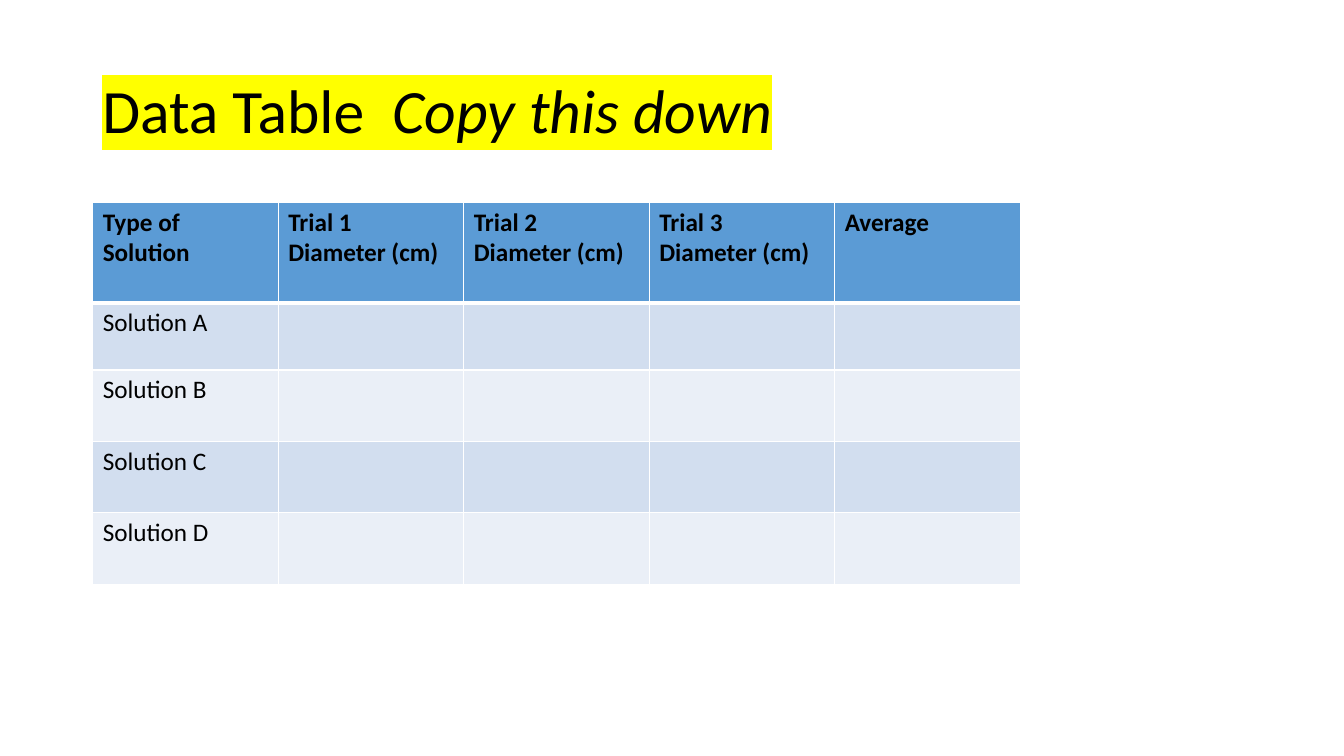
from lxml.etree import SubElement
from pptx import Presentation
from pptx.dml.color import RGBColor
from pptx.enum.text import MSO_ANCHOR
from pptx.oxml.ns import qn
from pptx.util import Pt

COLORS = {
    "text": "000000",
    "highlight": "FFFF00",
    "header": "5B9BD5",
    "odd_row": "D2DEEF",
    "even_row": "EAEFF7",
    "border": "FFFFFF",
}
FONT = "Calibri"
HEADINGS = [
    "Type of Solution",
    *(f"Trial {number}\nDiameter (cm)" for number in (1, 2, 3)),
    "Average",
]
SOLUTIONS = [f"Solution {letter}" for letter in "ABCD"]
ROW_HEIGHTS = [72, 48, 51, 51, 51]
COLUMN_WIDTH = 132.5


def style_paragraph(paragraph, size, bold=False):
    font = paragraph.font
    font.name = FONT
    font.size = Pt(size)
    font.bold = bold
    font.color.rgb = RGBColor.from_string(COLORS["text"])


def add_highlighted_run(paragraph, text, italic=False):
    run = paragraph.add_run()
    run.text = text
    run.font.italic = italic
    highlight = SubElement(run.font._element, qn("a:highlight"))
    SubElement(highlight, qn("a:srgbClr"), val=COLORS["highlight"])


def add_title(slide):
    title = slide.shapes.add_textbox(Pt(66), Pt(28.75), Pt(828), Pt(104.4))
    frame = title.text_frame
    frame.word_wrap = True
    frame.vertical_anchor = MSO_ANCHOR.MIDDLE
    heading = frame.paragraphs[0]
    heading.line_spacing = 0.9
    style_paragraph(heading, 44)
    add_highlighted_run(heading, "Data Table  ")
    add_highlighted_run(heading, "Copy this down", italic=True)


def set_borders(cell, top, bottom):
    properties = cell._tc.get_or_add_tcPr()
    for side, width in (("L", 1), ("R", 1), ("T", top), ("B", bottom)):
        line = SubElement(properties, qn(f"a:ln{side}"), w=str(Pt(width)))
        fill = SubElement(line, qn("a:solidFill"))
        SubElement(fill, qn("a:srgbClr"), val=COLORS["border"])


def fill_cell(cell, text, color, bold, top, bottom):
    set_borders(cell, top, bottom)
    cell.fill.solid()
    cell.fill.fore_color.rgb = RGBColor.from_string(COLORS[color])
    cell.text = text
    for paragraph in cell.text_frame.paragraphs:
        style_paragraph(paragraph, 18, bold)


def add_data_table(slide):
    rows = [HEADINGS]
    rows += [[solution] + [""] * (len(HEADINGS) - 1) for solution in SOLUTIONS]
    data_table = slide.shapes.add_table(
        len(rows), len(HEADINGS), Pt(66.25), Pt(144.25),
        Pt(COLUMN_WIDTH * len(HEADINGS)), Pt(sum(ROW_HEIGHTS)),
    ).table
    data_table.first_row = False
    data_table.horz_banding = False
    for column in data_table.columns:
        column.width = Pt(COLUMN_WIDTH)

    for index, (texts, height) in enumerate(zip(rows, ROW_HEIGHTS)):
        data_table.rows[index].height = Pt(height)
        is_header = index == 0
        band = "odd_row" if index % 2 else "even_row"
        # A thicker rule separates the headings from the solutions
        top = 3 if index == 1 else 1
        bottom = 3 if is_header else 1
        for column, text in enumerate(texts):
            fill_cell(data_table.cell(index, column), text,
                      "header" if is_header else band, is_header, top, bottom)


def main():
    presentation = Presentation()
    presentation.slide_width = Pt(960)
    presentation.slide_height = Pt(540)
    slide = presentation.slides.add_slide(presentation.slide_layouts[6])
    add_title(slide)
    add_data_table(slide)
    presentation.save("out.pptx")


if __name__ == "__main__":
    main()
